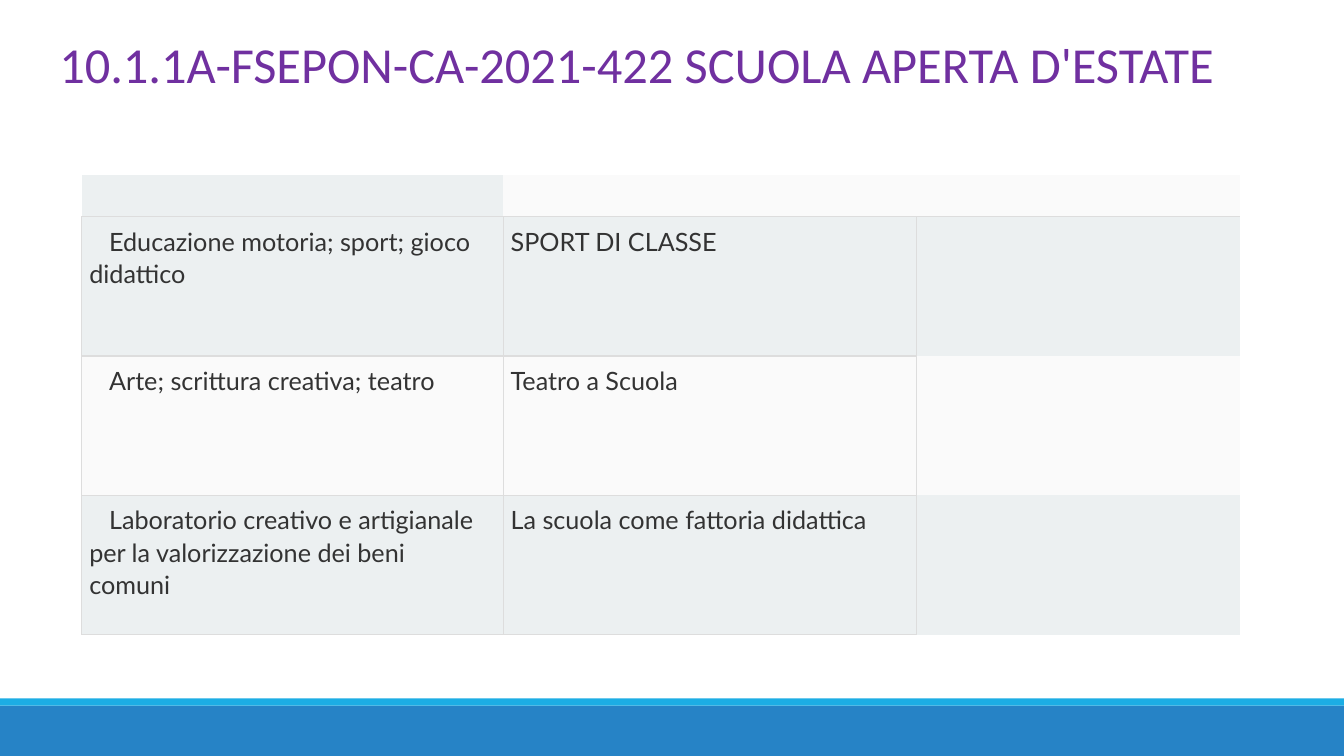
import pptx
import pptx.dml.color
import pptx.enum.shapes
import pptx.enum.text
import pptx.oxml
import pptx.oxml.ns
import pptx.util

Cm = pptx.util.Cm
Pt = pptx.util.Pt

SLIDE_WIDTH, SLIDE_HEIGHT = 33.87, 19.05
GREY, PALE, RULE = "ECF0F1", "FAFAFA", "DDDDDD"
PLAIN_TABLE_STYLE = "{2D5ABB26-0587-4C30-8999-92F81FD0307C}"
COLUMN_WIDTHS = [10.62, 10.41, 1.26, 0.58] + [1.26] * 5
ROW_HEIGHTS = [1.04] + [3.51] * 3
MODULES = [
    ("Educazione motoria; sport; gioco didattico", "SPORT DI CLASSE"),
    ("Arte; scrittura creativa; teatro", "Teatro a Scuola"),
    ("Laboratorio creativo e artigianale per la valorizzazione dei beni\vcomuni",
     "La scuola come fattoria didattica"),
]


def color(value):
    """Return the colour for a hex string."""
    return pptx.dml.color.RGBColor.from_string(value)


def write(frame, text, font, size, ink, indent=0, line_spacing=1.0, space_after=0):
    """Write one left-aligned paragraph into a text frame."""
    paragraph = frame.paragraphs[0]
    paragraph.text = text
    paragraph.alignment = pptx.enum.text.PP_ALIGN.LEFT
    paragraph.line_spacing = line_spacing
    paragraph.space_before = Pt(0)
    paragraph.space_after = Pt(space_after)
    if indent:
        paragraph._p.get_or_add_pPr().set("indent", str(Cm(indent)))
    for run in paragraph.runs:
        run.font.name = font
        run.font.size = Pt(size)
        run.font.color.rgb = color(ink)


def set_borders(cell, sides):
    """Draw thin rules on the given sides of a cell, in schema order."""
    properties = cell._tc.get_or_add_tcPr()
    for position, side in enumerate(sides):
        properties.insert(position, pptx.oxml.parse_xml(
            f'<a:ln{side} {pptx.oxml.ns.nsdecls("a")} w="{Pt(1)}"><a:solidFill>'
            f'<a:srgbClr val="{RULE}"/></a:solidFill></a:ln{side}>'))


def add_title(slide, left, top, width, height):
    """Place and format the slide title."""
    title = slide.shapes.title
    title.left, title.top, title.width, title.height = map(Cm, (left, top, width, height))
    frame = title.text_frame
    frame.word_wrap = True
    frame.auto_size = pptx.enum.text.MSO_AUTO_SIZE.SHAPE_TO_FIT_TEXT
    frame.vertical_anchor = pptx.enum.text.MSO_ANCHOR.MIDDLE
    write(frame, "10.1.1A-FSEPON-CA-2021-422 SCUOLA APERTA D'ESTATE", "Calibri", 36, "7030A0")


def add_modules(slide, left, top):
    """Add the table of school modules."""
    modules = slide.shapes.add_table(
        len(ROW_HEIGHTS), len(COLUMN_WIDTHS), Cm(left), Cm(top),
        Cm(sum(COLUMN_WIDTHS)), Cm(sum(ROW_HEIGHTS))).table
    modules.first_row = modules.horz_banding = False
    modules._tbl.tblPr.find(pptx.oxml.ns.qn("a:tableStyleId")).text = PLAIN_TABLE_STYLE
    for column, width in zip(modules.columns, COLUMN_WIDTHS):
        column.width = Cm(width)
    for row_number, (row, height) in enumerate(zip(modules.rows, ROW_HEIGHTS)):
        row.height = Cm(height)
        for cell in row.cells:
            cell.fill.solid()
            cell.fill.fore_color.rgb = color(PALE if row_number == 2 else GREY)
    heading = modules.cell(0, 1)
    heading.fill.fore_color.rgb = color(PALE)
    heading.merge(modules.cell(0, len(COLUMN_WIDTHS) - 1))
    set_borders(modules.cell(0, 0), "B")
    for row_number, (area, module) in enumerate(MODULES, start=1):
        for column, (text, sides, indent) in enumerate([(area, "LRTB", 0.5), (module, "LTB", 0)]):
            cell = modules.cell(row_number, column)
            cell.margin_left = cell.margin_right = cell.margin_top = cell.margin_bottom = Cm(0.19)
            set_borders(cell, sides)
            write(cell.text_frame, text, "Lato", 18, "333333", indent=indent,
                  line_spacing=1.07, space_after=4.5)


def add_footer(slide, top, accent_height):
    """Add the footer band with its lighter accent on top."""
    band_top = top + accent_height
    for band, height, fill in [(band_top, SLIDE_HEIGHT - band_top, "2683C6"),
                               (top, accent_height, "1CADE4")]:
        stripe = slide.shapes.add_shape(
            pptx.enum.shapes.MSO_SHAPE.RECTANGLE, 0, Cm(band), Cm(SLIDE_WIDTH), Cm(height))
        stripe.shadow.inherit = False
        stripe.fill.solid()
        stripe.fill.fore_color.rgb = color(fill)
        stripe.line.fill.background()


def main():
    """Build and save the presentation."""
    presentation = pptx.Presentation()
    presentation.slide_width, presentation.slide_height = Cm(SLIDE_WIDTH), Cm(SLIDE_HEIGHT)
    slide = presentation.slides.add_slide(presentation.slide_layouts[5])
    add_footer(slide, 17.6, 0.18)
    add_modules(slide, 2.06, 4.42)
    add_title(slide, 1.24, 0.69, 30, 1.8)
    presentation.save("out.pptx")


if __name__ == "__main__":
    main()
